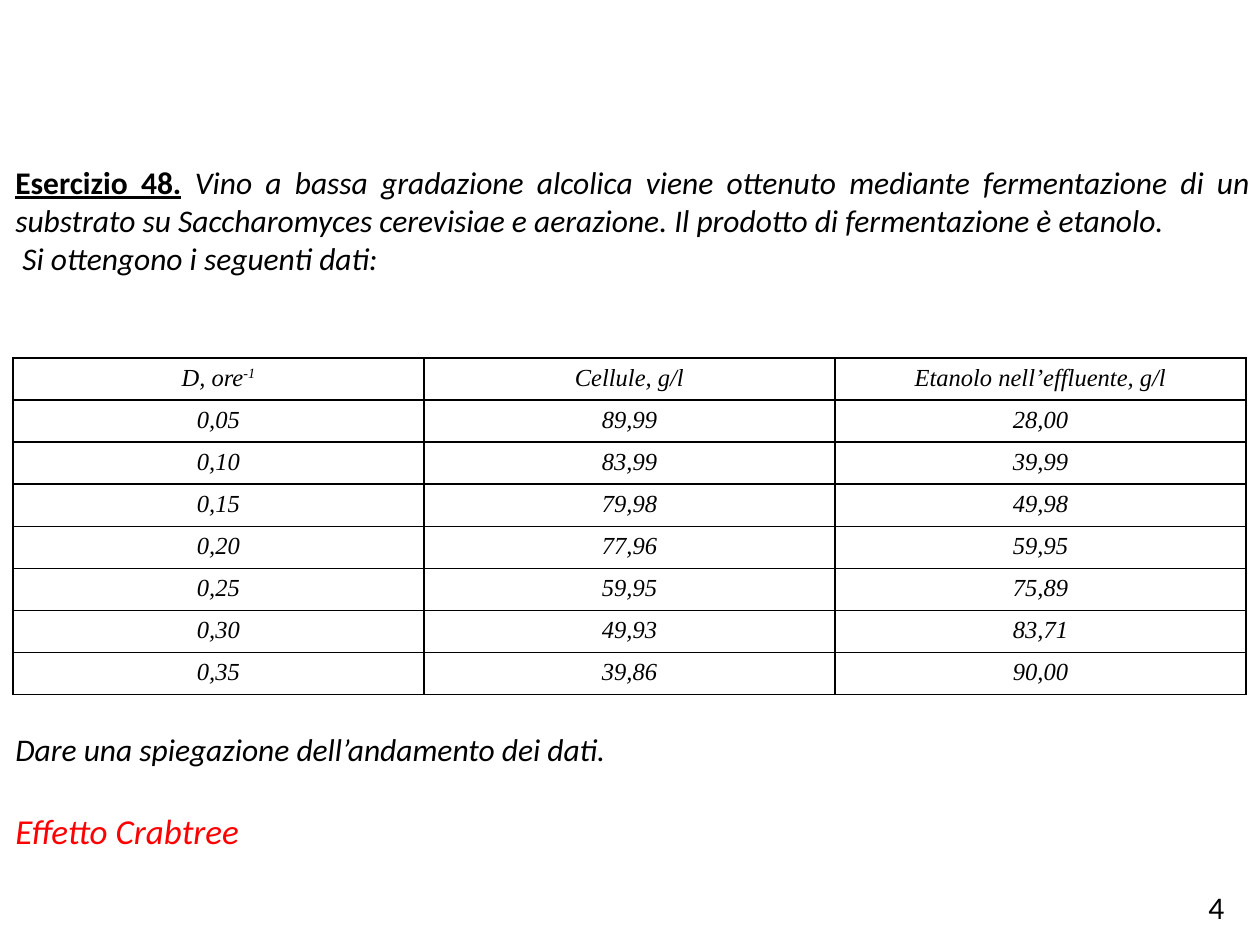
from dataclasses import dataclass

from lxml import etree
from pptx import Presentation
from pptx import util as u
from pptx.dml.color import RGBColor
from pptx.enum import text
from pptx.oxml import ns

PX_PER_INCH = 126


@dataclass(frozen=True)
class Theme:
    ink: str = "000000"
    answer: str = "FF0000"
    body_font: str = "Calibri"
    table_font: str = "Times New Roman"
    body_size: int = 18
    answer_size: int = 20
    table_size: int = 14
    border_width: int = 1


THEME = Theme()

ROWS = [
    ("D, ore", "Cellule, g/l", "Etanolo nell’effluente, g/l"),
    ("0,05", "89,99", "28,00"),
    ("0,10", "83,99", "39,99"),
    ("0,15", "79,98", "49,98"),
    ("0,20", "77,96", "59,95"),
    ("0,25", "59,95", "75,89"),
    ("0,30", "49,93", "83,71"),
    ("0,35", "39,86", "90,00"),
]


def px(length):
    return u.Emu(length * u.Inches(1) // PX_PER_INCH)


def add_span(para, words, font=THEME.body_font, size=THEME.body_size,
             color=THEME.ink, bold=False, italic=True, underline=False, raised=0):
    """Add a run of text; raised is a superscript offset in percent."""
    span = para.add_run()
    span.text = words
    span.font.name = font
    span.font.size = u.Pt(size)
    span.font.color.rgb = RGBColor.from_string(color)
    span.font.bold = bold
    span.font.italic = italic
    span.font.underline = underline
    if raised:
        span.font._element.set("baseline", str(raised * 1000))


def add_box(page, left, top, width, height, wrap=True):
    box = page.shapes.add_textbox(px(left), px(top), px(width), px(height))
    box.text_frame.word_wrap = wrap
    return box.text_frame


def add_para(frame, gap=0):
    """Start a justified paragraph, with gap points above it."""
    first = frame.paragraphs[0]
    para = frame.add_paragraph() if first.runs else first
    para.alignment = text.PP_ALIGN.JUSTIFY
    para.space_before = u.Pt(gap)
    return para


def set_borders(cell):
    properties = cell._tc.get_or_add_tcPr()
    for index, side in enumerate(("a:lnL", "a:lnR", "a:lnT", "a:lnB")):
        line = etree.Element(ns.qn(side), w=str(u.Pt(THEME.border_width)))
        fill = etree.SubElement(line, ns.qn("a:solidFill"))
        etree.SubElement(fill, ns.qn("a:srgbClr"), val=THEME.ink)
        properties.insert(index, line)


def add_data_table(page, left, top, column_width, row_height):
    count, columns = len(ROWS), len(ROWS[0])
    table = page.shapes.add_table(
        count, columns, px(left), px(top),
        px(column_width * columns), px(row_height * count)).table
    table.first_row = table.horz_banding = False
    for column in table.columns:
        column.width = px(column_width)
    for row, values in zip(table.rows, ROWS):
        row.height = px(row_height)
        for cell, value in zip(row.cells, values):
            cell.fill.background()
            set_borders(cell)
            para = cell.text_frame.paragraphs[0]
            para.alignment = text.PP_ALIGN.CENTER
            add_span(para, value, font=THEME.table_font, size=THEME.table_size)
    return table


def add_exercise(page):
    frame = add_box(page, 3, 140, 1260, 726)
    frame.margin_top = px(23)
    para = add_para(frame)
    add_span(para, "Esercizio 48.", bold=True, italic=False, underline=True)
    add_span(para, " Vino a bassa gradazione alcolica viene ottenuto mediante "
                   "fermentazione di un substrato su Saccharomyces cerevisiae e "
                   "aerazione. Il prodotto di fermentazione è etanolo. ")
    add_span(add_para(frame), " Si ottengono i seguenti dati:")
    # The gap leaves room for the table
    add_span(add_para(frame, gap=259),
             "Dare una spiegazione dell’andamento dei dati.")
    add_span(add_para(frame, gap=24), "Effetto Crabtree",
             size=THEME.answer_size, color=THEME.answer)


def main():
    deck = Presentation()
    deck.slide_width, deck.slide_height = u.Inches(10), u.Inches(7.5)
    page = deck.slides.add_slide(deck.slide_layouts[6])

    # Page number
    number = add_box(page, 1196, 882, 67, 63, wrap=False)
    add_span(number.paragraphs[0], "4", italic=False)

    # Exercise text and answer
    add_exercise(page)

    # Measured data, with the exponent of the first heading
    table = add_data_table(page, 13, 358, 411, 42)
    add_span(table.cell(0, 0).text_frame.paragraphs[0], "-1",
             font=THEME.table_font, size=THEME.table_size, raised=30)

    deck.save("out.pptx")


if __name__ == "__main__":
    main()
